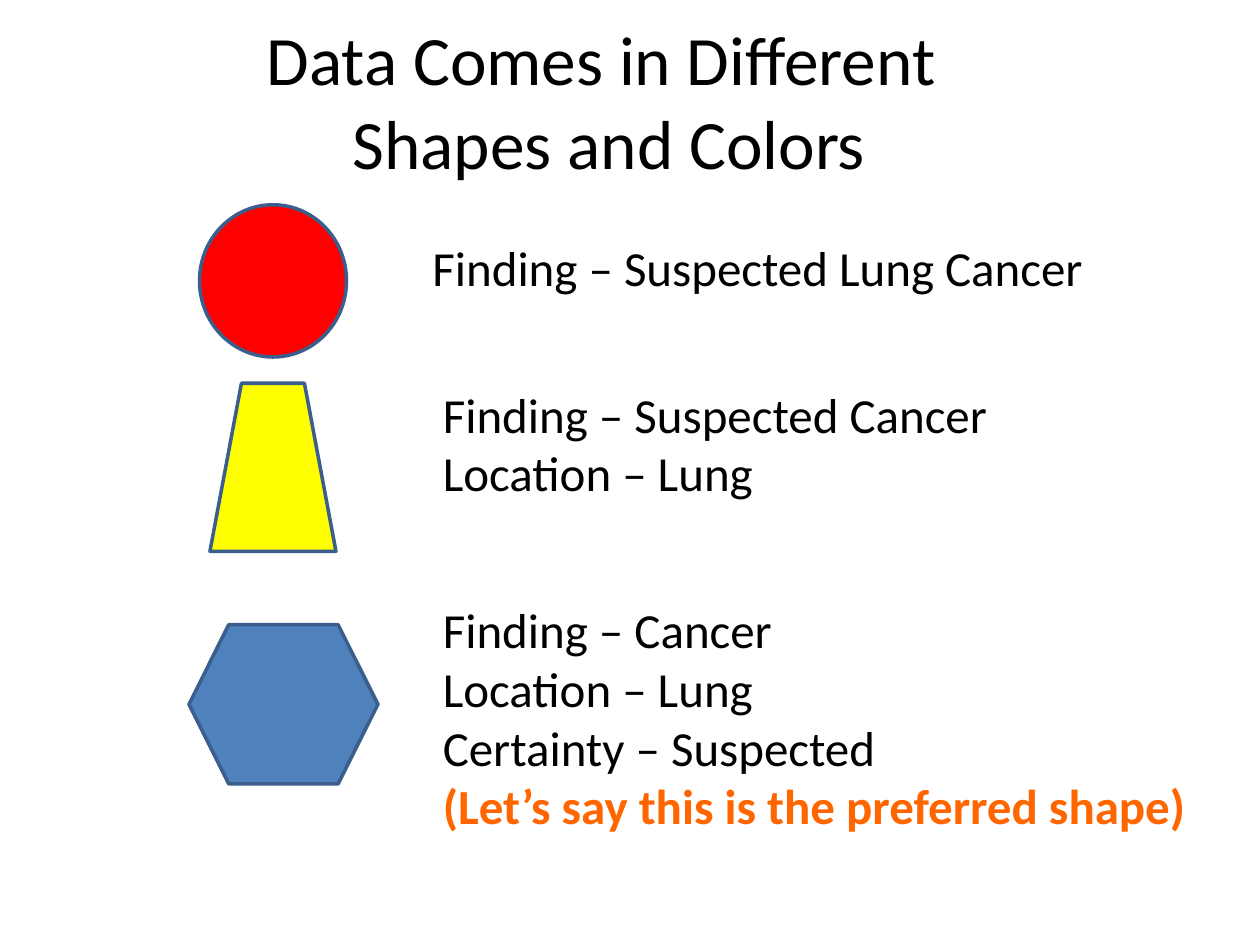
"""Build a slide matching three data shapes with their descriptions."""
from pptx import Presentation
from pptx.dml.color import RGBColor
from pptx.enum import shapes, text
from pptx.util import Pt

BLACK = RGBColor(0x00, 0x00, 0x00)
RED = RGBColor(0xFF, 0x00, 0x00)
YELLOW = RGBColor(0xFF, 0xFF, 0x00)
BLUE = RGBColor(0x4F, 0x81, 0xBD)
OUTLINE = RGBColor(0x3A, 0x5F, 0x8C)
ORANGE = RGBColor(0xFF, 0x66, 0x00)


def style(paragraph, size, color=BLACK, bold=False):
    for run in paragraph.runs:
        run.font.name = "Calibri"
        run.font.size = Pt(size)
        run.font.color.rgb = color
        run.font.bold = bold


deck = Presentation()
deck.slide_width, deck.slide_height = Pt(720), Pt(540)
slide = deck.slides.add_slide(deck.slide_layouts[5])

title = slide.shapes.title
title.left, title.top, title.width, title.height = Pt(24), Pt(12), Pt(648), Pt(90)
title.text_frame.text = "Data Comes in Different \vShapes and Colors"
title.text_frame.auto_size = text.MSO_AUTO_SIZE.NONE
title.text_frame.vertical_anchor = text.MSO_ANCHOR.MIDDLE
heading = title.text_frame.paragraphs[0]
heading.alignment = text.PP_ALIGN.CENTER
style(heading, 39.6)

descriptions = [
    ((240, 132, 390, 41), ["Finding – Suspected Lung Cancer"]),
    ((246, 216, 329, 75), ["Finding – Suspected Cancer", "Location – Lung"]),
    ((246, 339, 451, 143), ["Finding – Cancer", "Location – Lung", "Certainty – Suspected",
                            "(Let’s say this is the preferred shape)"]),
]
for box, lines in descriptions:
    description = slide.shapes.add_textbox(*map(Pt, box)).text_frame
    description.word_wrap = False
    description.auto_size = text.MSO_AUTO_SIZE.SHAPE_TO_FIT_TEXT
    description.text = "\n".join(lines)
    for paragraph in description.paragraphs:
        style(paragraph, 28)
style(description.paragraphs[-1], 28, ORANGE, True)

data_shapes = [
    (shapes.MSO_SHAPE.OVAL, (114, 117, 84, 87), RED),
    (shapes.MSO_SHAPE.TRAPEZOID, (120, 219, 72, 96), YELLOW),
    (shapes.MSO_SHAPE.HEXAGON, (108, 357, 108, 91), BLUE),
]
for kind, box, color in data_shapes:
    data_shape = slide.shapes.add_shape(kind, *map(Pt, box))
    data_shape.shadow.inherit = False
    data_shape.fill.solid()
    data_shape.fill.fore_color.rgb = color
    data_shape.line.color.rgb = OUTLINE
    data_shape.line.width = Pt(2)

deck.save("out.pptx")
